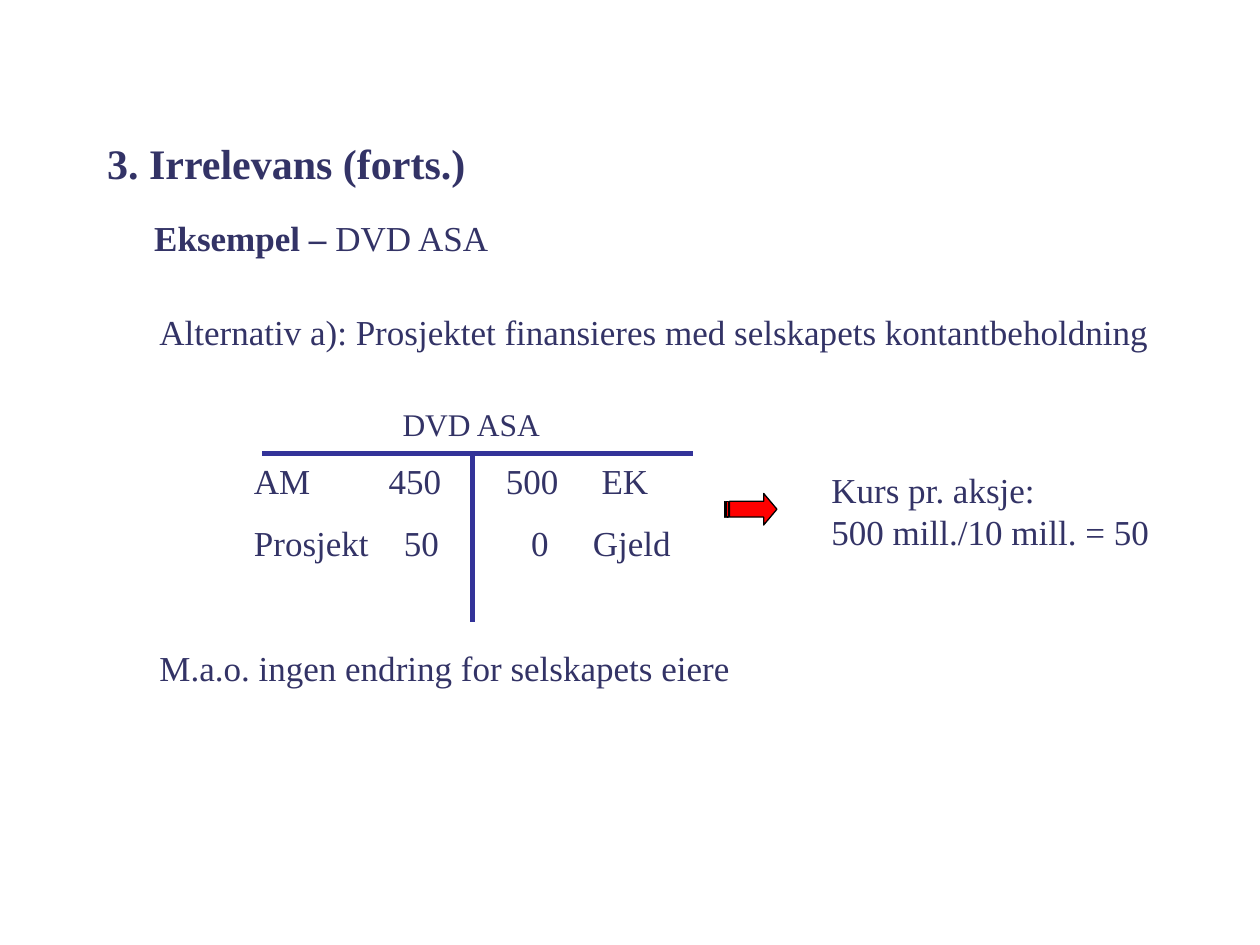
from pptx import Presentation
from pptx.dml.color import RGBColor
from pptx.enum.shapes import MSO_CONNECTOR, MSO_SHAPE
from pptx.enum.text import MSO_ANCHOR, MSO_AUTO_SIZE, PP_ALIGN
from pptx.oxml.ns import qn
from pptx.util import Inches, Pt
from lxml.etree import SubElement

COLORS = {"text": "333366", "rule": "333399", "arrow": "FF0000", "outline": "000000"}
FONT = "Times New Roman"
COLS, ROWS = 120, 90
WIDTH, HEIGHT = Inches(10), Inches(7.5)


def rgb(name):
    return RGBColor.from_string(COLORS[name])


def grid(x, y, w, h):
    cw, rh = WIDTH / COLS, HEIGHT / ROWS
    return round(x * cw), round(y * rh), round(w * cw), round(h * rh)


def add_run(p, text, size=20, bold=False):
    r = p.add_run()
    r.text = text
    f = r.font
    f.name, f.size, f.bold = FONT, Pt(size), bold
    f.color.rgb = rgb("text")


def add_text(shapes, box, lines, size=20, gap=0, wrap=True):
    tf = shapes.add_textbox(*grid(*box)).text_frame
    tf.word_wrap = wrap
    tf.auto_size = MSO_AUTO_SIZE.SHAPE_TO_FIT_TEXT
    for i, runs in enumerate(lines):
        p = tf.paragraphs[0] if i == 0 else tf.add_paragraph()
        if i:
            p.space_before = Pt(gap)
        for text, bold in runs:
            add_run(p, text, size, bold)
    return tf


def add_title(s, box, text):
    sp = s.shapes.title
    sp.left, sp.top, sp.width, sp.height = grid(*box)
    tf = sp.text_frame
    tf.auto_size = MSO_AUTO_SIZE.NONE
    tf.vertical_anchor = MSO_ANCHOR.MIDDLE
    p = tf.paragraphs[0]
    p.alignment = PP_ALIGN.LEFT
    add_run(p, text, 24, True)


def add_rule(shapes, x1, y1, x2, y2):
    left, top, w, h = grid(x1, y1, x2 - x1, y2 - y1)
    c = shapes.add_connector(MSO_CONNECTOR.STRAIGHT, left, top, left + w, top + h)
    c.line.color.rgb = rgb("rule")
    c.line.width = Pt(3)
    SubElement(c._element.spPr, qn("a:effectLst"))


def add_side(shapes, box, entries):
    tf = add_text(shapes, box, [[(text, False)] for text, _ in entries], gap=11)
    for p, (_, stops) in zip(tf.paragraphs, entries):
        tabs = SubElement(p._p.get_or_add_pPr(), qn("a:tabLst"))
        for stop in stops:
            SubElement(tabs, qn("a:tab"), pos=str(Inches(stop)), algn="l")


def add_account(s, box, name, assets, claims):
    x, y, w, h = box
    shapes = s.shapes.add_group_shape().shapes
    rule_y, mid = y + 5.2, x + 22
    add_rule(shapes, x + 2, rule_y, x + w - 2, rule_y)
    add_rule(shapes, mid, rule_y, mid, y + h)
    add_side(shapes, (x, rule_y, 21, 11.2), assets)
    add_side(shapes, (mid + 2, rule_y, 21, 11.2), claims)
    tf = add_text(shapes, (x + 9, y, 31, 4.8), [[(name, False)]], size=18)
    pPr = tf.paragraphs[0]._p.get_or_add_pPr()
    pPr.set("marL", str(Inches(0.43)))
    pPr.set("indent", "0")


def add_arrow(s, box):
    sp = s.shapes.add_shape(MSO_SHAPE.STRIPED_RIGHT_ARROW, *grid(*box))
    sp.adjustments[1] = 0.42
    sp.shadow.inherit = False
    sp.fill.solid()
    sp.fill.fore_color.rgb = rgb("arrow")
    sp.line.color.rgb = rgb("outline")
    sp.line.width = Pt(0.75)


def main():
    prs = Presentation()
    prs.slide_width, prs.slide_height = WIDTH, HEIGHT
    s = prs.slides.add_slide(prs.slide_layouts[5])
    add_title(s, (9, 10, 57, 11), "3. Irrelevans (forts.)")
    add_text(s.shapes, (13.5, 20, 34.5, 5.2),
             [[("Eksempel – ", True), ("DVD ASA", False)]], wrap=False)
    statements = [
        (29, "Alternativ a): Prosjektet finansieres med selskapets kontantbeholdning"),
        (61, "M.a.o. ingen endring for selskapets eiere"),
    ]
    for row, text in statements:
        add_text(s.shapes, (14, row, 104, 5.2), [[(text, False)]])
    add_account(s, (23, 38, 45, 21.2), "DVD ASA",
                [("AM\t450", [1.07]), ("Prosjekt\t50", [1.19])],
                [("500\tEK", [0.76]), ("\t0\tGjeld", [0.2, 0.69])])
    add_arrow(s, (69, 47, 5, 3))
    add_text(s.shapes, (78, 44, 35, 9.2),
             [[("Kurs pr. aksje:", False)], [("500 mill./10 mill. = 50", False)]])
    prs.save("out.pptx")


if __name__ == "__main__":
    main()
